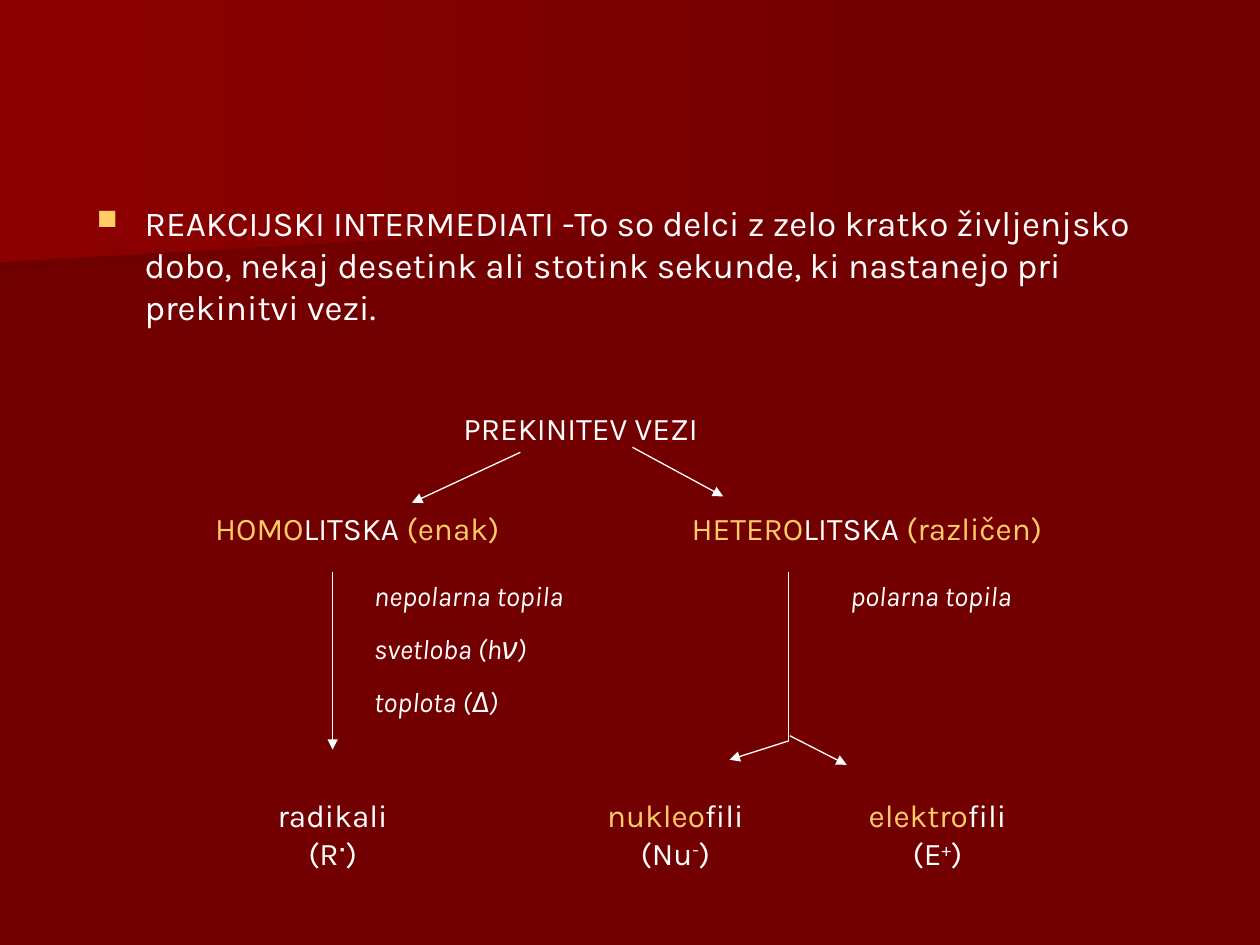
from dataclasses import dataclass

from lxml.etree import SubElement
from pptx import Presentation
from pptx.dml.color import RGBColor
from pptx.enum.shapes import MSO_CONNECTOR
from pptx.enum.text import PP_ALIGN
from pptx.oxml.ns import qn
from pptx.util import Inches, Pt


@dataclass(frozen=True)
class Theme:
    """Hold the colours, font and type sizes of the slide."""
    font: str = "Karla"
    background: RGBColor = RGBColor(0x72, 0x00, 0x00)
    shade: RGBColor = RGBColor(0x6F, 0x00, 0x00)
    glow: RGBColor = RGBColor(0x8C, 0x00, 0x00)
    text: RGBColor = RGBColor(0xFF, 0xFF, 0xFF)
    accent: RGBColor = RGBColor(0xFF, 0xCC, 0x66)
    body_size: int = 20
    label_size: int = 18
    note_size: int = 16
    line_width: float = 0.75


THEME = Theme()
ACCENT = {"color": THEME.accent}
RAISED = {"baseline": 30}
SYMBOL = {"size": THEME.label_size}


def add_backdrop(slide, points, start_color):
    """Draw a borderless polygon that fades into the background colour."""
    corners = [(Inches(x), Inches(y)) for x, y in points]
    builder = slide.shapes.build_freeform(*corners[0], scale=1.0)
    builder.add_line_segments(corners[1:], close=True)
    shape = builder.convert_to_shape()
    shape.shadow.inherit = False
    shape.line.fill.background()
    shape.fill.gradient()
    shape.fill.gradient_angle = 0
    for stop, color, position in zip(
        shape.fill.gradient_stops, (start_color, THEME.background), (0, 1)
    ):
        stop.color.rgb = color
        stop.position = position


def add_run(paragraph, text, size, color=THEME.text, bold=False, italic=False, baseline=0):
    """Append one formatted run to a paragraph."""
    run = paragraph.add_run()
    run.text = text
    run.font.name = THEME.font
    run.font.size = Pt(size)
    run.font.color.rgb = color
    run.font.bold = bold
    run.font.italic = italic
    if baseline:
        run._r.get_or_add_rPr().set("baseline", str(baseline * 1000))


def add_bullet(paragraph, indent):
    """Give a paragraph a square accent bullet with a hanging indent."""
    properties = paragraph._p.get_or_add_pPr()
    properties.set("marL", str(Inches(indent)))
    properties.set("indent", str(-Inches(indent)))
    color = SubElement(properties, qn("a:buClr"))
    SubElement(color, qn("a:srgbClr"), val=str(THEME.accent))
    SubElement(properties, qn("a:buSzPct"), val="80000")
    SubElement(properties, qn("a:buChar"), char="■")


def add_text(slide, box, *paragraphs, size=THEME.label_size, align=PP_ALIGN.LEFT,
             italic=False, bullet=False):
    """Add a wrapped text box whose paragraphs are lists of (text, format) runs."""
    shape = slide.shapes.add_textbox(*map(Inches, box))
    frame = shape.text_frame
    frame.word_wrap = True
    for index, runs in enumerate(paragraphs):
        paragraph = frame.add_paragraph() if index else frame.paragraphs[0]
        paragraph.alignment = align
        if index:
            paragraph.space_before = Pt(THEME.label_size / 2)
        if bullet:
            add_bullet(paragraph, 0.38)
        for text, style in runs:
            add_run(paragraph, text, **{"size": size, "italic": italic, **style})


def add_line(slide, start, end, arrow=True):
    """Draw a thin line, with a triangular head at its end if wanted."""
    connector = slide.shapes.add_connector(
        MSO_CONNECTOR.STRAIGHT, *map(Inches, (*start, *end))
    )
    connector.line.color.rgb = THEME.text
    connector.line.width = Pt(THEME.line_width)
    if arrow:
        SubElement(connector.line._get_or_add_ln(), qn("a:tailEnd"), type="triangle")
    SubElement(connector._element.spPr, qn("a:effectLst"))


def add_background(slide):
    """Fill the background and lay the two fading bands over it."""
    slide.background.fill.solid()
    slide.background.fill.fore_color.rgb = THEME.background
    add_backdrop(slide, [(7.78, 1.53), (0, 2.17), (0, 1.01), (7.79, 1.01)], THEME.shade)
    add_backdrop(slide, [(7.92, 1.62), (0, 2.08), (0, 0), (7.92, 0)], THEME.glow)


def add_cleavage_types(slide):
    """Add the root of the tree, its two branches and their conditions."""
    add_text(slide, (3.58, 3.2, 2.28, 0.4), [("PREKINITEV VEZI", {})])
    add_text(slide, (1.61, 3.99, 2.6, 0.4),
             [("HOMO", ACCENT), ("LITSKA ", {}), ("(enak)", ACCENT)])
    add_text(slide, (5.39, 3.99, 3.23, 0.85),
             [("HETERO", ACCENT), ("LITSKA ", {}), ("(različen)", ACCENT)])
    add_text(slide, (2.87, 4.54, 2.2, 1.27),
             [("nepolarna topila", {})],
             [("svetloba (h", {}), ("ν", SYMBOL), (")", {})],
             [("toplota (", {}), ("Δ", SYMBOL), (")", {})],
             size=THEME.note_size, italic=True)
    add_text(slide, (6.65, 4.54, 2.2, 0.37), [("polarna topila", {})],
             size=THEME.note_size, italic=True)


def add_products(slide):
    """Add the three centred intermediates at the foot of the tree."""
    products = [
        (1.93, 1.42, [("radikali (R", {}), ("⋅", {**RAISED, "bold": True})]),
        (4.61, 1.5, [("nukleo", ACCENT), ("fili (Nu", {}), ("-", RAISED)]),
        (6.73, 1.42, [("elektro", ACCENT), ("fili (E", {}), ("+", RAISED)]),
    ]
    for left, width, runs in products:
        add_text(slide, (left, 6.27, width, 0.7), [*runs, (")", {})], align=PP_ALIGN.CENTER)


def add_arrows(slide):
    """Connect the levels of the tree."""
    for start, end in [
        ((4.13, 3.59), (3.27, 3.99)),
        ((5.02, 3.55), (5.74, 3.94)),
        ((2.64, 4.54), (2.64, 5.95)),
        ((6.26, 5.88), (5.79, 6.03)),
        ((6.27, 5.84), (6.72, 6.07)),
    ]:
        add_line(slide, start, end)
    add_line(slide, (6.26, 4.54), (6.26, 5.88), arrow=False)


def main():
    """Build the slide on reaction intermediates and save it."""
    presentation = Presentation()
    presentation.slide_width = Inches(10)
    presentation.slide_height = Inches(7.5)
    slide = presentation.slides.add_slide(presentation.slide_layouts[6])
    add_background(slide)
    add_text(slide, (0.67, 1.55, 9, 4.92),
             [("REAKCIJSKI INTERMEDIATI -To so delci z zelo kratko življenjsko dobo, "
               "nekaj desetink ali stotink sekunde, ki nastanejo pri prekinitvi vezi.", {})],
             size=THEME.body_size, bullet=True)
    add_cleavage_types(slide)
    add_products(slide)
    add_arrows(slide)
    presentation.save("out.pptx")


if __name__ == "__main__":
    main()
